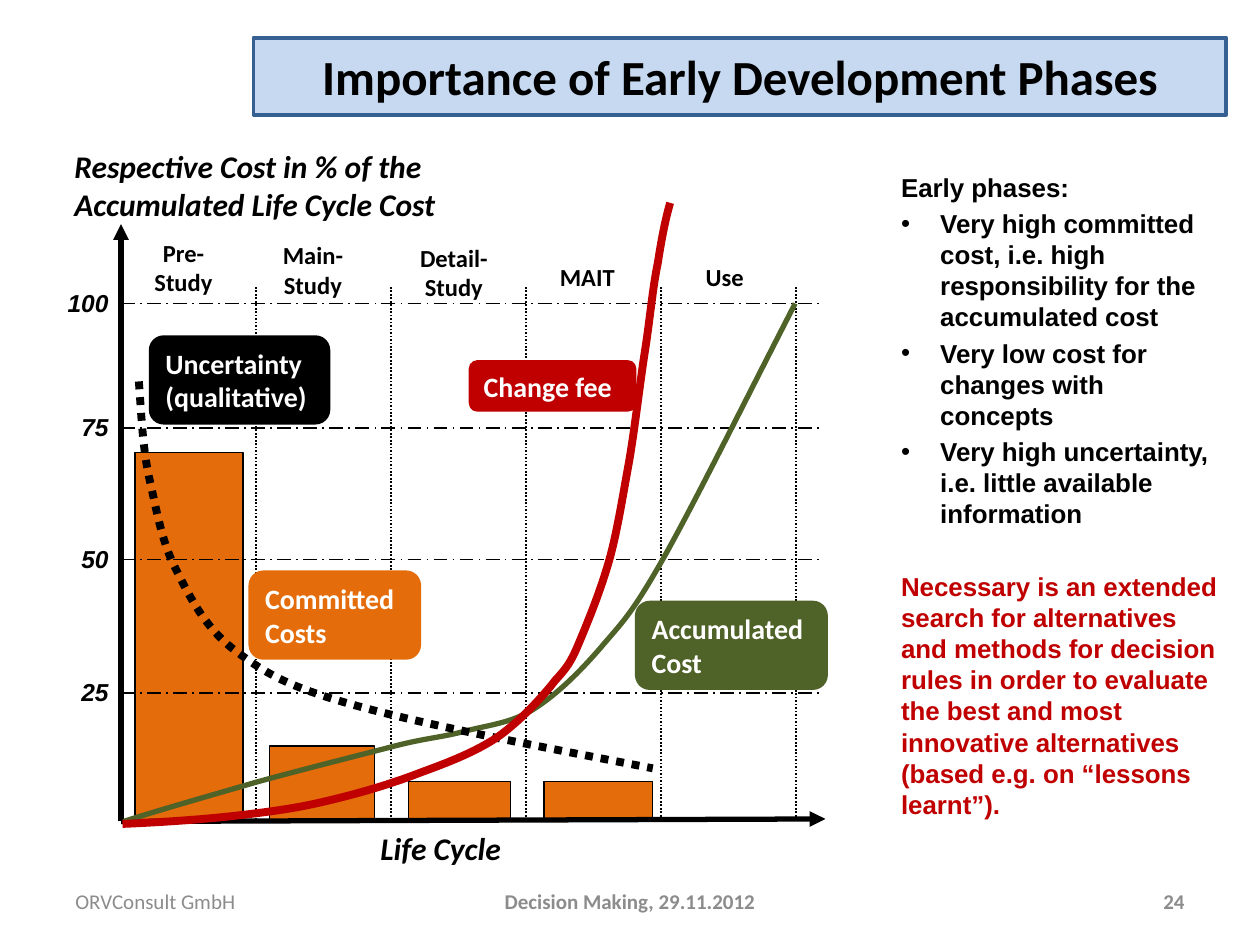
from lxml.etree import SubElement
from pptx import Presentation
from pptx.dml.color import RGBColor
from pptx.enum.dml import MSO_LINE
from pptx.enum.shapes import MSO_CONNECTOR, MSO_SHAPE
from pptx.enum.text import MSO_ANCHOR, MSO_AUTO_SIZE, PP_ALIGN
from pptx.oxml.ns import qn
from pptx.util import Cm, Pt

BLACK, WHITE, GREY = "000000", "FFFFFF", "8C8C8C"
ORANGE, GREEN, RED = "E46C0A", "4F6228", "C00000"

BARS = [(0.28, 3.0, 2.18), (3.0, 8.92, 2.11), (5.79, 9.63, 2.06), (8.53, 9.63, 2.18)]
PHASES = [("Pre-\nStudy", 1.26, -1.45), ("Main-\nStudy", 3.87, -1.4),
          ("Detail-\nStudy", 6.71, -1.35), ("MAIT", 9.4, -0.97), ("Use", 12.17, -0.97)]
PERCENT_LEVELS = {"100": 0, "75": 2.51, "50": 5.16, "25": 7.85}
PHASE_WIDTH = 2.72

ACCUMULATED = [
    (0.05, 10.44), (0.94, 10.16), (1.83, 9.91), (2.72, 9.65), (3.63, 9.4), (4.75, 9.12),
    (5.44, 8.94), (6.12, 8.76), (6.38, 8.76), (6.86, 8.64), (7.32, 8.51), (7.77, 8.48),
    (8.23, 8.23), (8.71, 7.95), (9.19, 7.49), (9.65, 6.96), (10.08, 6.45), (10.26, 6.32),
    (10.92, 5.16), (11.58, 3.99), (12.57, 1.98), (13.59, 0)]
UNCERTAINTY = [
    (0.36, 1.57), (0.41, 2.21), (0.43, 2.84), (0.56, 3.48), (0.71, 4.11), (0.81, 4.8),
    (1.12, 5.38), (1.42, 5.99), (1.75, 6.6), (2.36, 7.04), (2.97, 7.49), (3.43, 7.75),
    (4.83, 8.13), (6.22, 8.51), (8.48, 8.94), (10.72, 9.37)]
CHANGE_FEE = [
    (0.03, 10.49), (0.76, 10.46), (1.5, 10.41), (2.18, 10.34), (2.87, 10.26), (3.48, 10.19),
    (4.14, 10.03), (4.78, 9.88), (5.46, 9.68), (6.05, 9.45), (6.6, 9.25), (7.14, 9.04),
    (7.59, 8.74), (8.03, 8.43), (8.48, 7.95), (8.76, 7.59), (9.07, 7.26), (9.12, 7.11),
    (9.3, 6.68), (9.47, 6.27), (9.7, 5.69), (9.86, 5.11), (10.01, 4.55), (10.11, 3.91),
    (10.24, 3.2), (10.36, 2.51), (10.46, 1.6), (10.57, 0.91), (10.67, 0.25), (10.72, -0.33),
    (10.82, -0.81), (10.9, -1.32), (10.97, -1.68), (11.07, -2.03)]

EARLY_PHASES = [
    "Very high committed cost, i.e. high responsibility for the accumulated cost",
    "Very low cost for changes with concepts",
    "Very high uncertainty, i.e. little available information"]
CONCLUSION = ("Necessary is an extended search for alternatives and methods for decision rules "
              "in order to evaluate the best and most innovative alternatives "
              "(based e.g. on “lessons learnt”).")


def rgb(value):
    """Turn a hex string into a colour."""
    return RGBColor.from_string(value)


def set_box(shape, left, top, width, height):
    """Move and size a shape in centimetres."""
    shape.left, shape.top, shape.width, shape.height = map(Cm, (left, top, width, height))


def style_font(paragraph, size, color, name="Calibri", bold=True, italic=False):
    """Format a whole paragraph."""
    font = paragraph.font
    font.size, font.name, font.bold, font.italic = Pt(size), name, bold, italic
    font.color.rgb = rgb(color)


def style_line(line, color, width, dash=None):
    """Format an outline."""
    line.color.rgb, line.width = rgb(color), Pt(width)
    if dash:
        line.dash_style = dash


def fill_text(frame, text, size, color, align=PP_ALIGN.LEFT, **font):
    """Write one paragraph for each line of text."""
    frame.text, frame.word_wrap = text, False
    for paragraph in frame.paragraphs:
        paragraph.alignment = align
        style_font(paragraph, size, color, **font)


def add_text(slide, box, text, size, color=BLACK, **style):
    """Add a text box."""
    frame = slide.shapes.add_textbox(*map(Cm, box)).text_frame
    fill_text(frame, text, size, color, **style)
    return frame


def add_block(slide, kind, box, color):
    """Add a plain filled shape without an outline."""
    block = slide.shapes.add_shape(kind, *map(Cm, box))
    block.shadow.inherit = False
    block.fill.solid()
    block.fill.fore_color.rgb = rgb(color)
    block.line.fill.background()
    return block


def add_line(slide, start, end, width, dash=None, arrow=False):
    """Add a straight black line, with an arrowhead if wanted."""
    line = slide.shapes.add_connector(MSO_CONNECTOR.STRAIGHT, *map(Cm, (*start, *end)))
    style_line(line.line, BLACK, width, dash)
    properties = line.element.spPr
    if arrow:
        SubElement(properties.find(qn("a:ln")), qn("a:tailEnd"), type="triangle")
    SubElement(properties, qn("a:effectLst"))


def add_curve(slide, left, top, points, color, width, dash=None):
    """Draw a chain of cubic curves through a start and triples of points."""
    start, *rest = [(Cm(left + x), Cm(top + y)) for x, y in points]
    builder = slide.shapes.build_freeform(*start)
    builder.add_line_segments(rest, close=False)
    curve = builder.convert_to_shape()
    segments = list(curve.element.iter(qn("a:lnTo")))
    for first, second, third in zip(segments[::3], segments[1::3], segments[2::3]):
        first.tag = qn("a:cubicBezTo")
        for segment in (second, third):
            first.append(segment[0])
            segment.getparent().remove(segment)
    curve.shadow.inherit = False
    curve.fill.background()
    style_line(curve.line, color, width, dash)


def add_label(slide, box, text, color):
    """Add a rounded curve label."""
    label = add_block(slide, MSO_SHAPE.ROUNDED_RECTANGLE, box, color)
    fill_text(label.text_frame, text, 16, WHITE)


def build_title(slide, box):
    """Format the framed title."""
    title = slide.shapes.title
    set_box(title, *box)
    title.fill.solid()
    title.fill.fore_color.rgb = rgb("C6D9F1")
    style_line(title.line, "376092", 2.25)
    fill_text(title.text_frame, "Importance of Early Development Phases", 28, BLACK,
              PP_ALIGN.CENTER)
    title.text_frame.vertical_anchor = MSO_ANCHOR.MIDDLE


def build_body(slide, box):
    """Fill the list beside the diagram."""
    body = slide.placeholders[1]
    set_box(body, *box)
    frame = body.text_frame
    frame.text = "\n".join(["Early phases:", *EARLY_PHASES, CONCLUSION])
    frame.auto_size, frame.word_wrap = MSO_AUTO_SIZE.NONE, True
    for paragraph in frame.paragraphs:
        closing = paragraph.text == CONCLUSION
        style_font(paragraph, 14.8, RED if closing else BLACK, "Arial")
        paragraph.line_spacing = 1.0
        paragraph.space_before = Pt(24 if closing else 3)
        bulleted = paragraph.text in EARLY_PHASES
        indent = Cm(0.79) if bulleted else 0
        properties = paragraph._p.get_or_add_pPr()
        properties.set("marL", str(indent))
        properties.set("indent", str(-indent))
        if bulleted:
            SubElement(properties, qn("a:buFont"), typeface="Arial")
            SubElement(properties, qn("a:buChar"), char="•")
        else:
            SubElement(properties, qn("a:buNone"))
        for run_defaults in properties.findall(qn("a:defRPr")):
            properties.append(run_defaults)


def build_diagram(slide, left, top, width, height):
    """Draw the life cycle cost diagram, its origin at the lower left corner."""
    def at(x, y, *size):
        return (left + x, top + y, *size)

    for x, y, bar_width in BARS:
        bar = add_block(slide, MSO_SHAPE.RECTANGLE, at(x, y, bar_width, height - 0.03 - y), ORANGE)
        style_line(bar.line, BLACK, 0.75)
    add_line(slide, at(0, height), at(width, height - 0.05), 3, arrow=True)
    add_line(slide, at(0, height), at(0, -1.6), 3, arrow=True)
    for phase, center, y in PHASES:
        add_text(slide, at(center - 1, y, 2, 1.45 if "\n" in phase else 0.86), phase, 14,
                 align=PP_ALIGN.CENTER)
    for percent, y in PERCENT_LEVELS.items():
        add_line(slide, at(0, y), at(14.1, y), 1, MSO_LINE.LONG_DASH_DOT)
        add_text(slide, at(-1.8, y - 0.44, 1.8, 0.84), percent, 14, align=PP_ALIGN.RIGHT,
                 name="Arial", italic=True)
    for phase_end in range(1, len(PHASES) + 1):
        x = phase_end * PHASE_WIDTH
        add_line(slide, at(x, height - 0.03), at(x, -0.36), 1, MSO_LINE.ROUND_DOT)
    add_text(slide, at(-1.19, -3.28, 8.1, 1.8),
             "Respective Cost in % of the\nAccumulated Life Cycle Cost", 18, italic=True)
    add_text(slide, at(4.98, height + 0.02, 3.1, 1.02), "Life Cycle", 18, italic=True)

    add_curve(slide, left, top, ACCUMULATED, GREEN, 3)
    add_label(slide, at(2.57, 5.38, 3.48, 1.8), "Committed\nCosts", ORANGE)
    add_curve(slide, left, top, UNCERTAINTY, BLACK, 4.5, MSO_LINE.ROUND_DOT)
    add_label(slide, at(0.56, 0.64, 3.66, 1.8), "Uncertainty\n(qualitative)", BLACK)
    add_label(slide, at(10.36, 5.99, 3.89, 1.8), "Accumulated\nCost", GREEN)
    add_label(slide, at(7.01, 1.14, 3.38, 1.04), "Change fee", RED)
    add_curve(slide, left, top, CHANGE_FEE, RED, 4.5)


def build_footer(slide, left, top, width, height):
    """Place company, event and page number along the bottom."""
    side, middle = 5.92, 8.05
    for x, part_width, text, align, bold in [
            (0, side, "ORVConsult GmbH", PP_ALIGN.LEFT, False),
            ((width - middle) / 2, middle, "Decision Making, 29.11.2012", PP_ALIGN.CENTER, True),
            (width - side, side, "24", PP_ALIGN.RIGHT, True)]:
        frame = add_text(slide, (left + x, top, part_width, height), text, 12, GREY,
                         align=align, bold=bold)
        frame.word_wrap, frame.vertical_anchor = True, MSO_ANCHOR.MIDDLE


def main():
    """Build and save the slide."""
    deck = Presentation()
    deck.slide_width, deck.slide_height = Cm(25.4), Cm(19.05)
    slide = deck.slides.add_slide(deck.slide_layouts[1])
    build_title(slide, (5.11, 0.76, 19.61, 1.55))
    build_body(slide, (17.91, 3.33, 7.01, 13.69))
    build_diagram(slide, 2.44, 6.12, 14.2, 10.44)
    build_footer(slide, 1.27, 17.65, 22.86, 1.02)
    deck.save("out.pptx")


if __name__ == "__main__":
    main()
